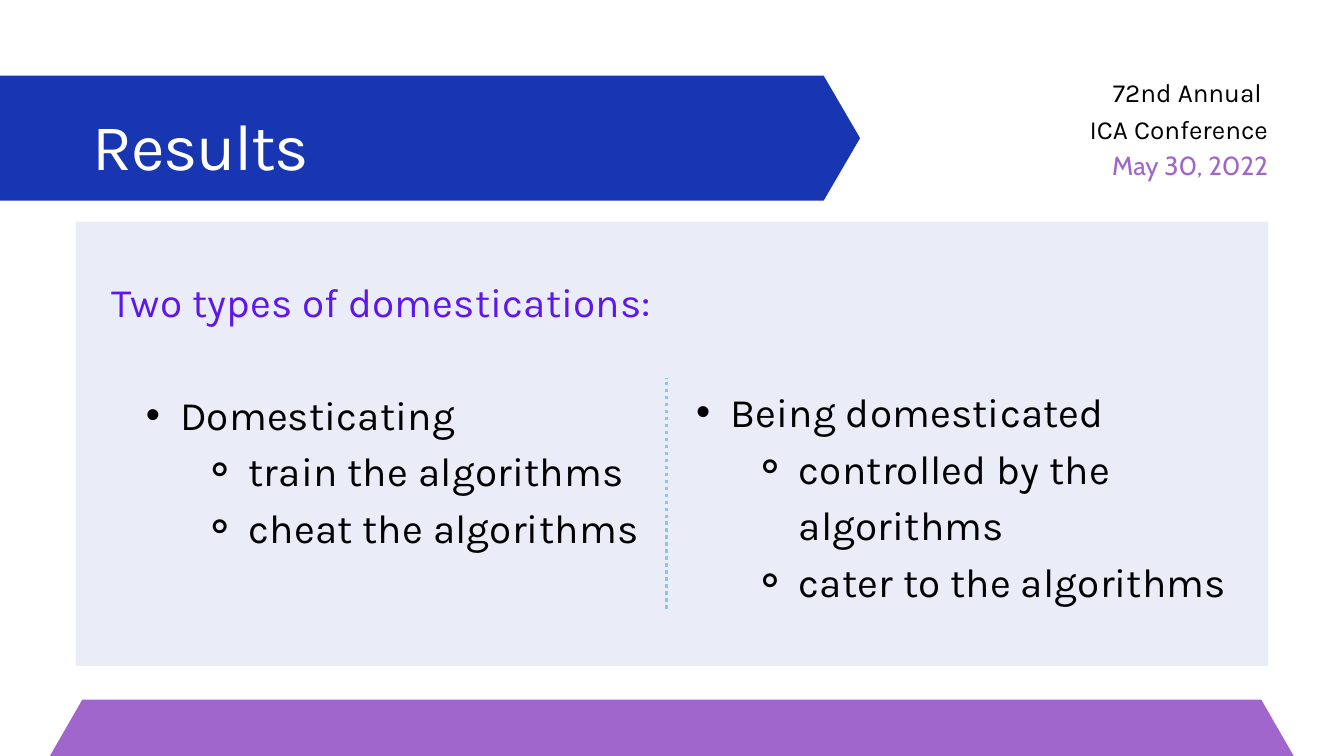
from lxml.etree import SubElement
from pptx import Presentation
from pptx.dml.color import RGBColor
from pptx.enum.dml import MSO_LINE
from pptx.enum.shapes import MSO_CONNECTOR, MSO_SHAPE
from pptx.enum.text import MSO_AUTO_SIZE, PP_ALIGN
from pptx.oxml.ns import qn
from pptx.util import Pt

COLORS = {
    "blue": "1836B2",
    "purple": "A066CB",
    "violet": "5E17EB",
    "sky": "86C7ED",
    "black": "000000",
    "white": "FFFFFF",
}
BULLETS = {1: ("•", 73.4, -36.7), 2: ("⚬", 146.9, -49)}
BODY_SIZE = 43.3
BODY_LEADING = 60.6
BODY_TRACKING = 0.2


def rgb(name):
    """Return the named palette colour."""
    return RGBColor.from_string(COLORS[name])


def add_filled_shape(slide, preset, box, color):
    """Add a flat preset shape without outline or shadow."""
    shape = slide.shapes.add_shape(preset, *map(Pt, box))
    shape.shadow.inherit = False
    shape.fill.solid()
    shape.fill.fore_color.rgb = rgb(color)
    shape.line.fill.background()
    return shape


def add_hexagon(slide, box, point_width, color):
    """Add a hexagon whose side points have the given width."""
    hexagon = add_filled_shape(slide, MSO_SHAPE.HEXAGON, box, color)
    hexagon.adjustments[0] = point_width / box[3]


def add_text_frame(slide, box, margins=(0, 0)):
    """Add a wrapping text box with side and top margins and return its frame."""
    text_frame = slide.shapes.add_textbox(*map(Pt, box)).text_frame
    text_frame.word_wrap = True
    text_frame.auto_size = MSO_AUTO_SIZE.SHAPE_TO_FIT_TEXT
    text_frame.margin_left = text_frame.margin_right = Pt(margins[0])
    text_frame.margin_top = text_frame.margin_bottom = Pt(margins[1])
    return text_frame


def format_paragraph(paragraph, size, leading, color, font="Karla", tracking=0):
    """Set the line spacing of a paragraph and the font of its runs."""
    paragraph.line_spacing = Pt(leading)
    for run in paragraph.runs:
        run.font.size = Pt(size)
        run.font.name = font
        run.font.color.rgb = rgb(color)
        if tracking:
            run.font._element.set("spc", str(round(tracking * 100)))


def format_bullet(paragraph, level):
    """Give a body paragraph the bullet and indent of its level."""
    character, margin, indent = BULLETS[level]
    format_paragraph(paragraph, BODY_SIZE, BODY_LEADING, "black", tracking=BODY_TRACKING)
    paragraph.level = level
    properties = paragraph._p.get_or_add_pPr()
    properties.set("marL", str(Pt(margin)))
    properties.set("indent", str(Pt(indent)))
    SubElement(properties, qn("a:buFont")).set("typeface", "Arial")
    SubElement(properties, qn("a:buChar")).set("char", character)


def add_column(slide, box, bullets, heading=None, margins=(0, 0)):
    """Add bulleted text, below a heading if there is one."""
    text_frame = add_text_frame(slide, box, margins)
    lines = [text for level, text in bullets]
    text_frame.text = "\n".join([heading, *lines] if heading else lines)
    paragraphs = list(text_frame.paragraphs)
    if heading:
        title = paragraphs.pop(0)
        format_paragraph(title, BODY_SIZE, BODY_LEADING, "violet", tracking=BODY_TRACKING)
        paragraphs[0].space_before = Pt(BODY_LEADING)
    for paragraph, (level, text) in zip(paragraphs, bullets):
        format_bullet(paragraph, level)


def add_title_banner(slide, box):
    """Add the pointed banner with the slide title."""
    left, top, width, height = box
    add_hexagon(slide, box, 39, "blue")
    text_frame = add_text_frame(slide, (left + 244, top + 18, 764, 91.5))
    text_frame.text = "Results"
    format_paragraph(text_frame.paragraphs[0], 70, 98, "white", tracking=-1.4)


def add_conference_note(slide, box):
    """Add the right-aligned conference name and date."""
    text_frame = add_text_frame(slide, box)
    text_frame.text = "72nd Annual \nICA Conference\nMay 30, 2022"
    styles = [("black", "Karla"), ("black", "Karla"), ("purple", "Cabin")]
    for paragraph, (color, font) in zip(text_frame.paragraphs, styles):
        paragraph.alignment = PP_ALIGN.RIGHT
        format_paragraph(paragraph, 28, 39.2, color, font)


def add_divider(slide, x, top, bottom):
    """Add a dotted vertical line."""
    line = slide.shapes.add_connector(MSO_CONNECTOR.STRAIGHT, Pt(x), Pt(bottom), Pt(x), Pt(top))
    line.line.color.rgb = rgb("sky")
    line.line.width = Pt(3.75)
    line.line.dash_style = MSO_LINE.ROUND_DOT
    SubElement(line._element.spPr, qn("a:effectLst"))


def add_results_panel(slide, box):
    """Add the tinted panel with two columns and a divider."""
    left, top, width, height = box
    panel = add_filled_shape(slide, MSO_SHAPE.RECTANGLE, box, "blue")
    color = panel._element.spPr.find(".//" + qn("a:srgbClr"))
    SubElement(color, qn("a:alpha")).set("val", "9000")
    add_column(
        slide,
        (left + 38.5, top + 50.4, 1201, 414.7),
        [(1, "Domesticating"), (2, "train the algorithms"), (2, "cheat the algorithms")],
        heading="Two types of domestications:",
    )
    add_column(
        slide,
        (left + 621, top + 165, 720, 249.8),
        [
            (1, "Being domesticated"),
            (2, "controlled by the algorithms"),
            (2, "cater to the algorithms"),
        ],
        margins=(7.2, 3.6),
    )
    add_divider(slide, left + 633.3, top + 167, top + 414.7)


def main():
    """Build and save the results slide."""
    presentation = Presentation()
    presentation.slide_width = Pt(1440)
    presentation.slide_height = Pt(810)
    slide = presentation.slides.add_slide(presentation.slide_layouts[6])
    add_title_banner(slide, (-145, 81, 1066.5, 134))
    add_results_panel(slide, (81, 237.6, 1278, 475.9))
    add_conference_note(slide, (1159, 76.3, 199.5, 116))
    add_hexagon(slide, (53.3, 749.5, 1333, 121.5), 35, "purple")
    presentation.save("out.pptx")


if __name__ == "__main__":
    main()
